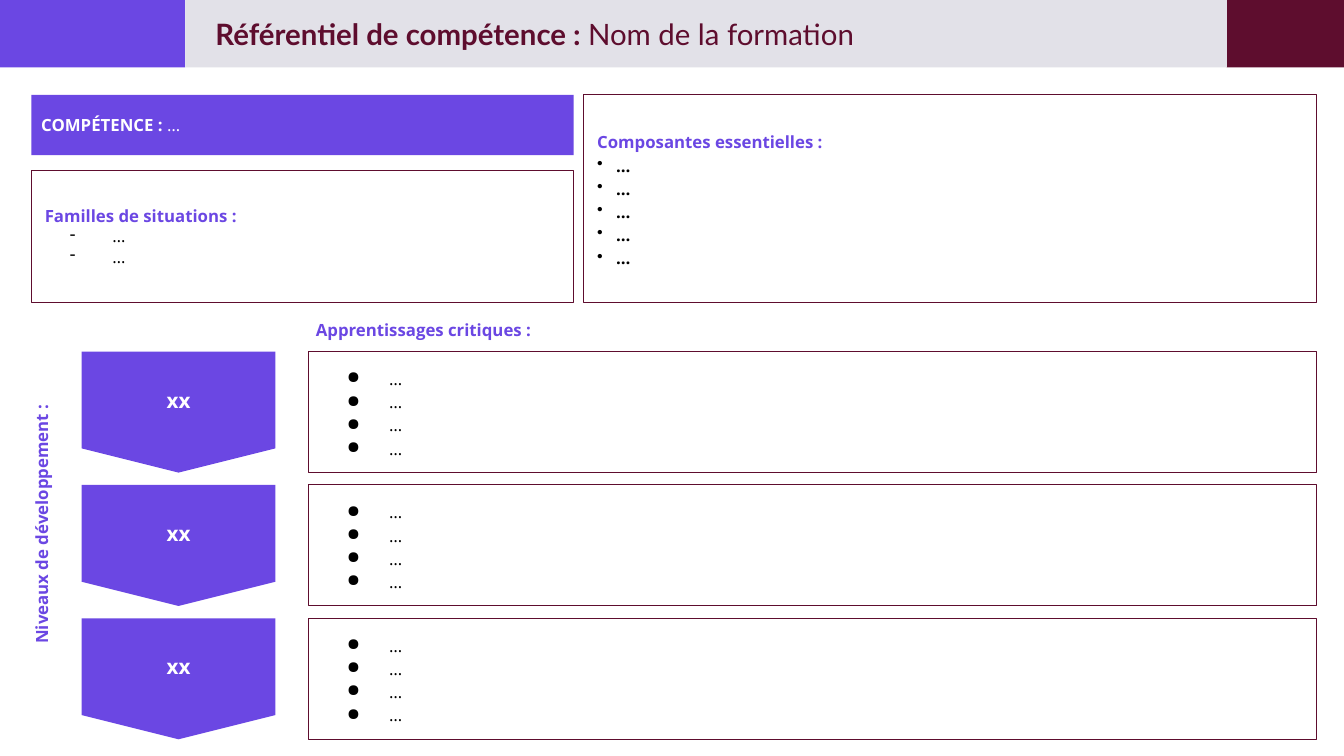
from lxml import etree
from pptx import Presentation
from pptx.dml.color import RGBColor
from pptx.enum.shapes import MSO_SHAPE
from pptx.enum.text import MSO_ANCHOR, PP_ALIGN
from pptx.oxml.ns import qn
from pptx.util import Cm, Pt

VIOLET = RGBColor(0x6B, 0x47, 0xE3)
BURGUNDY = RGBColor(0x5E, 0x0D, 0x2E)
GREY = RGBColor(0xE2, 0xE1, 0xE8)
WHITE = RGBColor(0xFF, 0xFF, 0xFF)
BLACK = RGBColor(0, 0, 0)

RECTANGLE = MSO_SHAPE.RECTANGLE
PENTAGON = MSO_SHAPE.FLOWCHART_OFFPAGE_CONNECTOR
MIDDLE, TOP = MSO_ANCHOR.MIDDLE, MSO_ANCHOR.TOP
LEFT, CENTER = PP_ALIGN.LEFT, PP_ALIGN.CENTER


class SlideBuilder:
    font_name = "Open Sans"
    font_size = 12
    inset = 0.34

    def __init__(self, slide):
        self.slide = slide

    def prepare_frame(self, shape, anchor, inset):
        frame = shape.text_frame
        frame.word_wrap = True
        frame.vertical_anchor = anchor
        frame.margin_left = frame.margin_right = Cm(inset)
        frame.margin_top = frame.margin_bottom = Cm(inset)
        return frame

    def block(self, left, top, width, height, fill=None, kind=RECTANGLE, inset=inset):
        """Filled shape, or an outlined one when no fill is given."""
        shape = self.slide.shapes.add_shape(
            kind, Cm(left), Cm(top), Cm(width), Cm(height))
        shape.shadow.inherit = False
        if fill is None:
            shape.fill.background()
            shape.line.color.rgb = BURGUNDY
            shape.line.width = Pt(0.75)
        else:
            shape.fill.solid()
            shape.fill.fore_color.rgb = fill
            shape.line.fill.background()
        return self.prepare_frame(shape, MIDDLE, inset)

    def label(self, left, top, width, height, text, rotation=0):
        shape = self.slide.shapes.add_textbox(
            Cm(left), Cm(top), Cm(width), Cm(height))
        shape.rotation = rotation
        frame = self.prepare_frame(shape, TOP, self.inset)
        self.add_line(frame, text, align=CENTER)

    def add_line(self, frame, text, color=VIOLET, bold=True, align=LEFT,
                 spacing=None, size=font_size, font=font_name):
        """Add a paragraph, using the empty first one when it is free."""
        paragraph = frame.add_paragraph() if frame.text else frame.paragraphs[0]
        paragraph.text = text
        paragraph.alignment = align
        if spacing:
            paragraph.line_spacing = spacing
        self.style(paragraph.runs[0], color, bold, size, font)
        return paragraph

    def add_plain_run(self, paragraph, text, color, size=font_size, font=font_name):
        run = paragraph.add_run()
        run.text = text
        self.style(run, color, False, size, font)

    def style(self, run, color, bold, size, font):
        run.font.name = font
        run.font.size = Pt(size)
        run.font.bold = bold
        run.font.color.rgb = color

    def bullets(self, frame, count, mark, margin, hanging, bold=False, spacing=None):
        for _ in range(count):
            paragraph = self.add_line(frame, "…", BLACK, bold, spacing=spacing)
            properties = paragraph._p.get_or_add_pPr()
            properties.set("marL", str(Cm(margin)))
            properties.set("indent", str(-Cm(hanging)))
            bullet_color = etree.SubElement(properties, qn("a:buClr"))
            etree.SubElement(bullet_color, qn("a:srgbClr"), val=str(BLACK))
            etree.SubElement(properties, qn("a:buChar"), char=mark)


def main():
    presentation = Presentation()
    presentation.slide_width = Cm(33.87)
    presentation.slide_height = Cm(19.05)
    builder = SlideBuilder(presentation.slides.add_slide(presentation.slide_layouts[6]))

    # Header band
    builder.block(0, 0, 4.67, 1.7, VIOLET)
    builder.block(30.91, 0, 2.96, 1.7, BURGUNDY)
    title = builder.block(4.67, 0, 26.25, 1.7, GREY, inset=0.25)
    title_style = {"size": 21, "font": "Lato"}
    heading = builder.add_line(title, "Référentiel de compétence : ", BURGUNDY, **title_style)
    heading._p.get_or_add_pPr().set("marL", str(Cm(0.51)))
    builder.add_plain_run(heading, "Nom de la formation", BURGUNDY, **title_style)

    # Skill and its families of situations
    skill = builder.block(0.79, 2.39, 13.67, 1.52, VIOLET, inset=0.25)
    skill_line = builder.add_line(skill, "COMPÉTENCE : ", WHITE)
    builder.add_plain_run(skill_line, "…", WHITE)
    families = builder.block(0.79, 4.29, 13.67, 3.33)
    builder.add_line(families, "Familles de situations :")
    builder.bullets(families, 2, "-", 1.7, 1.07)

    # Essential components
    components = builder.block(14.71, 2.39, 18.47, 5.23)
    builder.add_line(components, "Composantes essentielles :", spacing=1.15)
    builder.bullets(components, 5, "•", 0.48, 0.48, bold=True, spacing=1.15)

    # Development levels, each with its critical learnings
    builder.label(-2.16, 12.45, 6.91, 1.52, "Niveaux de développement :", rotation=270)
    builder.label(5.33, 7.8, 10.69, 0.76, "Apprentissages critiques :")
    for level in range(3):
        top = 8.86 + level * 3.36
        arrow = builder.block(2.06, top, 4.88, 3.05, VIOLET, PENTAGON)
        builder.add_line(arrow, "xx", WHITE, align=CENTER, size=14.7)
        learnings = builder.block(7.77, top, 25.4, 3.05)
        builder.bullets(learnings, 4, "●", 1.7, 1.07, spacing=1.15)

    presentation.save("out.pptx")


if __name__ == "__main__":
    main()
